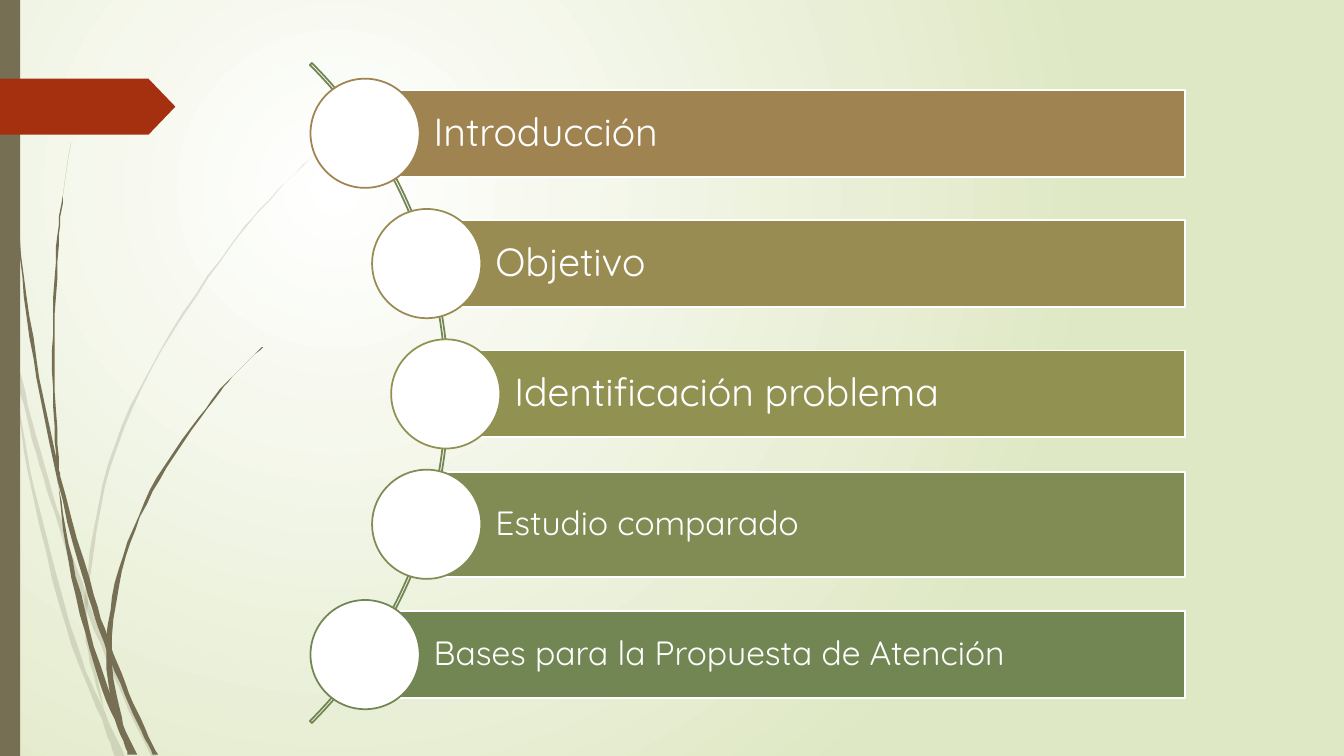
from lxml import etree
from pptx import Presentation
from pptx import util as u
from pptx.dml.color import RGBColor
from pptx.enum import shapes, text
from pptx.oxml import ns

OLIVE, RED, WHITE = "766F54", "A53010", "FFFFFF"

# Each grass blade: one edge downwards or upwards, then the edge back (points)
PALE_BLADES = [
    ([(0, 203), (10.1, 248.4), (26, 311.9), (44.6, 374.4), (66.2, 437),
      (91.4, 498.2), (111.6, 540)],
     [(108, 540), (88.6, 499.7), (63.4, 439.2), (41.8, 375.8), (25.9, 323.6),
      (12.2, 270.7), (0, 215.3)]),
    ([(7.9, 252), (20.2, 338.4), (46.8, 447.1), (72.7, 514.1), (82.1, 540)],
     [(89.3, 540), (67, 491.8), (50.4, 445.7), (22.3, 337.7), (7.9, 252)]),
    ([(224.6, 110.2), (193, 141.8), (164.2, 175.7), (113.8, 250.6),
      (77, 331.9), (61.2, 420.5), (62.6, 465.1), (75.6, 511.9)],
     [(75.6, 511.9), (65.5, 465.1), (63.4, 420.5), (79.2, 332.6),
      (115.2, 251.3), (164.9, 176.4), (193, 142.6), (224.6, 110.2)]),
]
DARK_BLADES = [
    ([(2.9, 0), (5.8, 78.5), (13.7, 167), (25.9, 255.6), (43.2, 339.8),
      (67, 424.8), (81.4, 467.3), (97.9, 508.3), (113, 539.3)],
     [(109.4, 539.3), (95, 509.8), (76.3, 464.4), (63.4, 426.2), (41, 343.4),
      (23.8, 255.6), (12.2, 167.8), (5, 79.2), (2.2, 0)]),
    ([(41, 343.4), (49, 401), (67, 474.5), (84.2, 519.8), (91.4, 539.3)],
     [(97.9, 539.3), (87.8, 517.7), (70.6, 473), (51.8, 400.3), (41, 343.4)]),
    ([(50.4, 101.5), (44.6, 139), (40.3, 176.4), (37.4, 251.3),
      (39.6, 323.3), (43.2, 339.8)],
     [(43.2, 339.8), (41.8, 326.2), (38.9, 251.3), (41.8, 176.4),
      (45.4, 139), (50.4, 101.5)]),
    ([(187.2, 247.7), (166.3, 268.6), (146.9, 291.6), (112.3, 341.3),
      (87.8, 396.7), (76.3, 454.3), (79.2, 497.5), (87.8, 517.7)],
     [(87.8, 517.7), (79.9, 464), (90, 397.4), (113.8, 342.7),
      (147.6, 292.3), (166.3, 269.3), (187.9, 247.7)]),
]

# Label, colour, circle left, bar height, text size
TOPICS = [
    ("Introducción", "9F8351", 221.8, 62, 28),
    ("Objetivo", "998C52", 265.8, 62, 28),
    ("Identificación problema", "919252", 279.4, 62, 28),
    ("Estudio comparado", "808C53", 265.8, 75, 24),
    ("Bases para la Propuesta de Atención", "728653", 221.8, 62, 24),
]
CIRCLE, FIRST_TOP, PITCH, BAR_RIGHT = 78, 56.2, 93.1, 846.7


def color(code):
    return RGBColor.from_string(code)


def smooth(points, steps=6):
    """Return points along a Catmull-Rom curve through the given points."""
    padded = [points[0], *points, points[-1]]
    curve = []
    for a, b, c, d in zip(padded, padded[1:], padded[2:], padded[3:]):
        for t in (step / steps for step in range(steps)):
            curve.append(tuple(
                b[k] + t / 2 * (c[k] - a[k]
                + t * (2 * a[k] - 5 * b[k] + 4 * c[k] - d[k])
                + t * t * (3 * (b[k] - c[k]) + d[k] - a[k]))
                for k in (0, 1)))
    return curve + [points[-1]]


class SlideMaker:
    font = "Quicksand"
    line_width = 1.25

    def __init__(self, page):
        self.page = page

    def background(self, inner, outer):
        fill = self.page.background.fill
        fill.gradient()
        for stop, position, code in zip(fill.gradient_stops, (0, 1), (inner, outer)):
            stop.position = position
            stop.color.rgb = color(code)
        linear = self.page.element.find(".//" + ns.qn("a:lin"))
        radial = etree.Element(ns.qn("a:path"), path="circle")
        etree.SubElement(radial, ns.qn("a:fillToRect"),
                         l="50000", t="50000", r="100000", b="100000")
        linear.getparent().replace(linear, radial)

    def paint(self, shape, fill=None, line=None):
        shape.shadow.inherit = False
        if fill:
            shape.fill.solid()
            shape.fill.fore_color.rgb = color(fill)
        else:
            shape.fill.background()
        if line:
            shape.line.color.rgb = color(line)
            shape.line.width = u.Pt(self.line_width)
        else:
            shape.line.fill.background()

    def shape(self, kind, left, top, width, height, fill=None, line=None, adjust=()):
        shape = self.page.shapes.add_shape(
            kind, u.Pt(left), u.Pt(top), u.Pt(width), u.Pt(height))
        for index, value in enumerate(adjust):
            shape.adjustments[index] = value
        self.paint(shape, fill, line)
        return shape

    def blade(self, edges, fill, opacity=100):
        start, *rest = smooth(edges[0]) + smooth(edges[1])
        builder = self.page.shapes.build_freeform(*start, scale=u.Pt(1))
        builder.add_line_segments(rest)
        shape = builder.convert_to_shape()
        self.paint(shape, fill)
        if opacity < 100:
            tint = shape.fill._xPr.find(".//" + ns.qn("a:srgbClr"))
            etree.SubElement(tint, ns.qn("a:alpha"), val=str(opacity * 1000))

    def label(self, box, words, size):
        frame = box.text_frame
        frame.text = words
        frame.word_wrap = True
        frame.vertical_anchor = text.MSO_ANCHOR.MIDDLE
        frame.margin_left = u.Pt(49)
        frame.margin_right = frame.margin_top = frame.margin_bottom = u.Pt(5.5)
        para = frame.paragraphs[0]
        para.alignment = text.PP_ALIGN.LEFT
        para.line_spacing = 0.9
        span = para.runs[0]
        span.font.name = self.font
        span.font.size = u.Pt(size)
        span.font.color.rgb = color(WHITE)


def main():
    deck = Presentation()
    deck.slide_width, deck.slide_height = u.Pt(960), u.Pt(540)
    maker = SlideMaker(deck.slides.add_slide(deck.slide_layouts[6]))
    kinds = shapes.MSO_SHAPE

    # Backdrop: gradient, grass, side band and red tag
    maker.background(WHITE, "DFE8C4")
    for edges in PALE_BLADES:
        maker.blade(edges, OLIVE, opacity=20)
    for edges in DARK_BLADES:
        maker.blade(edges, OLIVE)
    maker.shape(kinds.RECTANGLE, 0, 0, 14.4, 540, OLIVE)
    maker.shape(kinds.PENTAGON, 0, 56.2, 125.3, 40, RED, adjust=[0.48])

    # Arc that the circles sit on
    maker.shape(kinds.BLOCK_ARC, -346.3, -52.6, 666.7, 666.7,
                line="728653", adjust=[189, 27, 0.003])

    # Topics: bar with its label, then the circle over its left end
    for row, (words, tone, left, height, size) in enumerate(TOPICS):
        top = FIRST_TOP + row * PITCH
        bar_left = left + CIRCLE / 2
        bar = maker.shape(kinds.RECTANGLE, bar_left, top + (CIRCLE - height) / 2,
                          BAR_RIGHT - bar_left, height, tone, WHITE)
        maker.label(bar, words, size)
        maker.shape(kinds.OVAL, left, top, CIRCLE, CIRCLE, WHITE, tone)

    deck.save("out.pptx")


if __name__ == "__main__":
    main()
